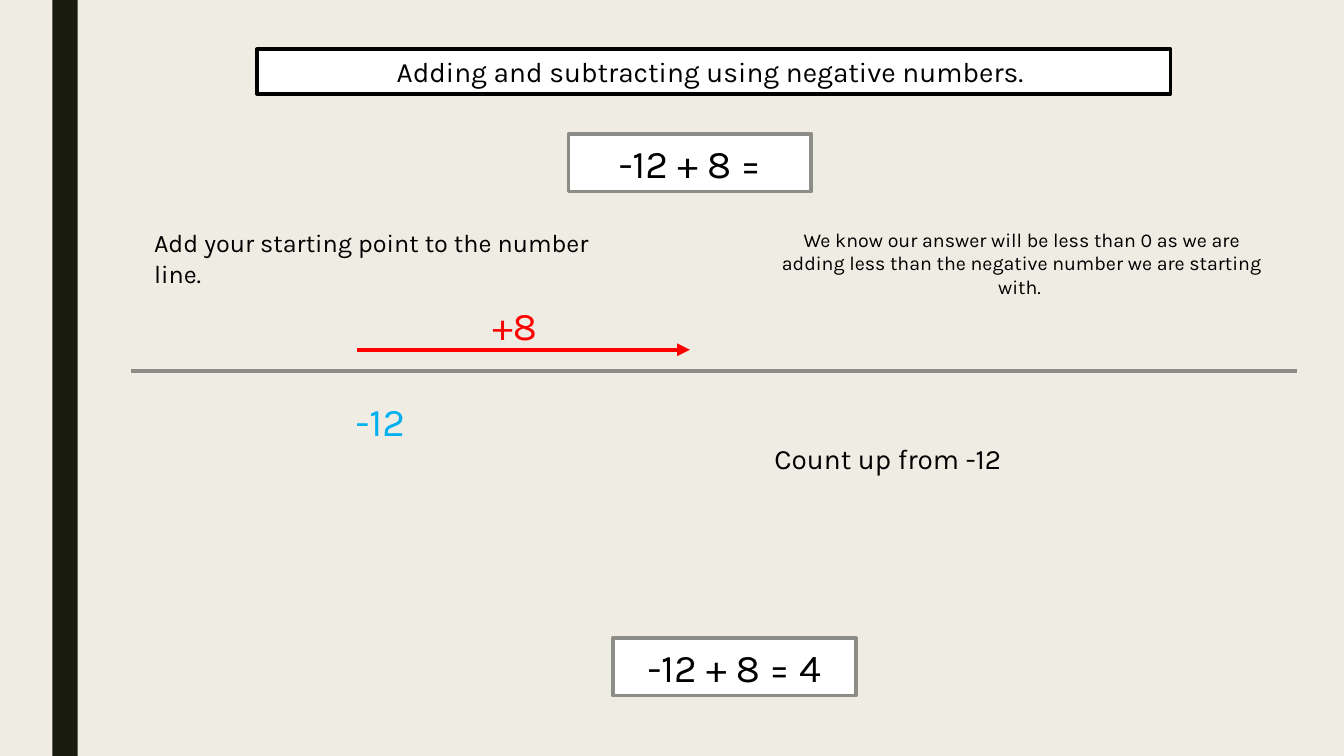
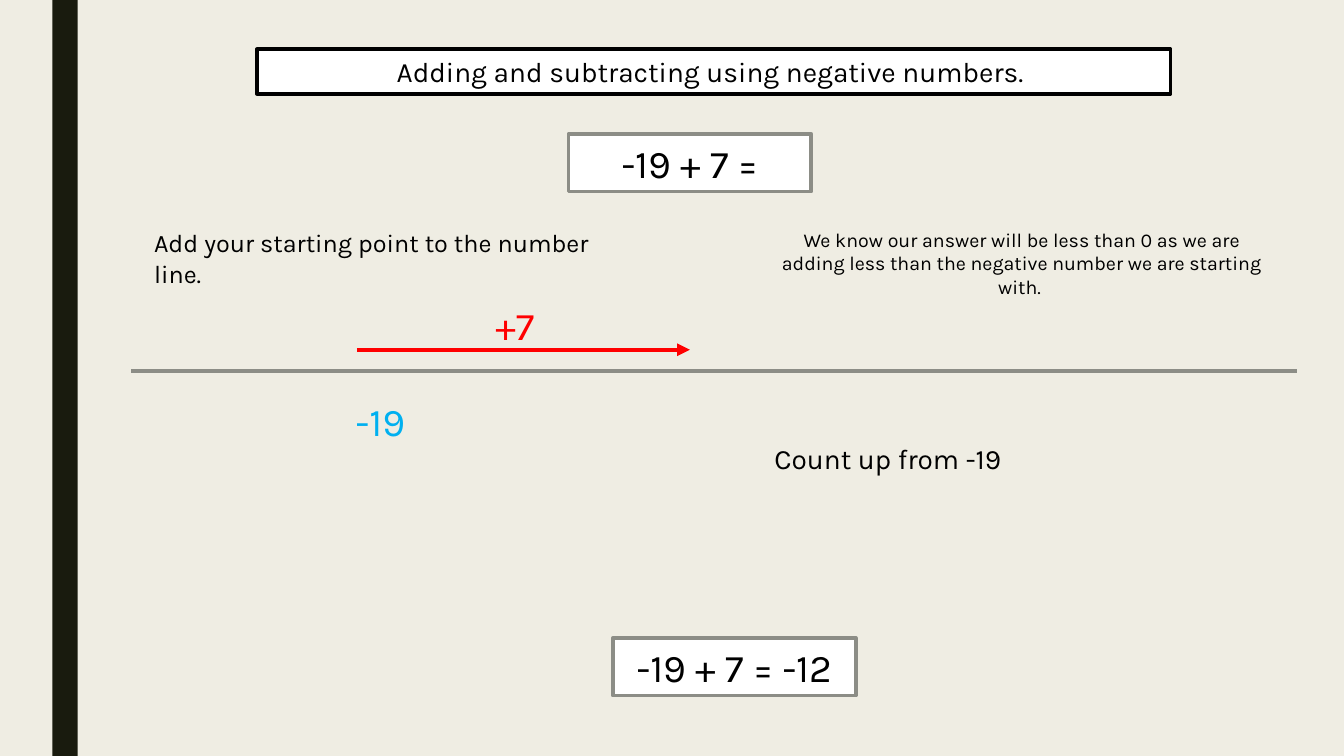
from dataclasses import dataclass

from lxml.etree import SubElement
from pptx import Presentation
from pptx.dml.color import RGBColor
from pptx.enum.shapes import MSO_CONNECTOR as Connector, MSO_SHAPE as Preset
from pptx.enum.text import MSO_ANCHOR as Anchor, MSO_AUTO_SIZE as AutoSize, PP_ALIGN as Align
from pptx.oxml.ns import qn
from pptx.util import Inches, Pt


@dataclass(frozen=True)
class Theme:
    font: str = "Karla"
    paper: str = "EFEDE3"
    band: str = "191B0E"
    ink: str = "000000"
    box: str = "FFFFFF"
    grey: str = "8C8D86"
    start: str = "00B0F0"
    step: str = "FF0000"
    sum_size: float = 28
    title_size: float = 20
    prompt_size: float = 18
    note_size: float = 14
    border: float = 2.75
    stroke: float = 3


COLUMNS, ROWS = 40, 30
SUM_COLUMNS, LABEL_COLUMNS, SUM_ROWS, TITLE_ROWS = 7.23, 2.64, 2.28, 1.76
TITLE = "Adding and subtracting using negative numbers. "
PROMPT = "Add your starting point to the number line."
NOTE = ("We know our answer will be less than 0 as we are adding less than "
        "the negative number we are starting with. ")
EXERCISES = [("-12", "8", "4"), ("-19", "7", "-12")]


def apply_format(target, values):
    for name, value in values.items():
        setattr(target, name, value)


class Deck:
    def __init__(self, theme):
        self.theme = theme
        self.presentation = Presentation()
        apply_format(self.presentation, {"slide_width": Inches(13.33), "slide_height": Inches(7.5)})
        self.column = self.presentation.slide_width / COLUMNS
        self.row = self.presentation.slide_height / ROWS
        self.layout = self.presentation.slide_layouts.get_by_name("Title Only")
        self.slide = None
        self.paint(self.presentation.slide_master.background.fill, theme.paper)

    def add_slide(self):
        self.slide = self.presentation.slides.add_slide(self.layout)

    def place(self, column, row, columns, rows):
        return (round(column * self.column), round(row * self.row),
                round(columns * self.column), round(rows * self.row))

    def paint(self, fill, color):
        fill.solid()
        fill.fore_color.rgb = RGBColor.from_string(color)

    def outline(self, line, color, width):
        self.paint(line.fill, color)
        line.width = Pt(width)

    def set_text(self, shape, text, size, color=None, align=Align.CENTER):
        frame = shape.text_frame
        frame.text = text
        apply_format(frame, {"word_wrap": True, "auto_size": AutoSize.NONE,
                             "vertical_anchor": Anchor.TOP})
        paragraph = frame.paragraphs[0]
        paragraph.alignment = align
        font = paragraph.runs[0].font
        apply_format(font, {"name": self.theme.font, "size": Pt(size)})
        font.color.rgb = RGBColor.from_string(color or self.theme.ink)

    def rectangle(self, area, color):
        shape = self.slide.shapes.add_shape(Preset.RECTANGLE, *self.place(*area))
        shape.shadow.inherit = False
        self.paint(shape.fill, color)
        return shape

    def layout_band(self, area):
        band = self.rectangle(area, self.theme.band)
        band.line.fill.background()
        band.element.nvSpPr.cNvPr.set("id", "20")
        self.layout.shapes.element.append(band.element)

    def title(self, text, area):
        title = self.slide.shapes.title
        apply_format(title, dict(zip(("left", "top", "width", "height"), self.place(*area))))
        self.paint(title.fill, self.theme.box)
        self.outline(title.line, self.theme.ink, self.theme.border)
        self.set_text(title, text, self.theme.title_size)

    def sum_box(self, text, column, row):
        shape = self.rectangle((column, row, SUM_COLUMNS, SUM_ROWS), self.theme.box)
        self.outline(shape.line, self.theme.grey, self.theme.border)
        self.set_text(shape, text, self.theme.sum_size)

    def text(self, text, area, size, color=None, align=Align.CENTER):
        shape = self.slide.shapes.add_textbox(*self.place(*area))
        self.set_text(shape, text, size, color, align)

    def label(self, text, column, row, color):
        self.text(text, (column, row, LABEL_COLUMNS, SUM_ROWS), self.theme.sum_size, color)

    def horizontal_line(self, start, end, row, color, arrow=False):
        left, top, width, height = self.place(start, row, end - start, 0)
        connector = self.slide.shapes.add_connector(
            Connector.STRAIGHT, left, top, left + width, top + height)
        self.outline(connector.line, color, self.theme.stroke)
        properties = connector.element.spPr
        if arrow:
            SubElement(properties.find(qn("a:ln")), qn("a:tailEnd"), type="triangle")
        SubElement(properties, qn("a:effectLst"))


def add_exercise(deck, start, step, answer):
    theme = deck.theme
    question = f"{start} + {step} ="
    deck.title(TITLE, (7.65, 1.96, 27.19, TITLE_ROWS))
    deck.sum_box(question, 16.92, 5.32)
    deck.horizontal_line(3.9, 38.59, 14.72, theme.grey)
    deck.text(PROMPT, (4.29, 8.84, 14.04, 1.6), theme.prompt_size, align=Align.LEFT)
    deck.label(start, 10, 15.56, theme.start)
    deck.text(NOTE, (22.78, 8.84, 15.27, SUM_ROWS), theme.note_size)
    deck.horizontal_line(10.62, 20.53, 13.88, theme.step, arrow=True)
    deck.label(f"+{step}", 14, 11.76, theme.step)
    deck.text(f"Count up from {start}", (21.85, 17.32, 9.15, TITLE_ROWS), theme.title_size)
    deck.sum_box(f"{question} {answer}", 18.24, 25.32)


def main():
    deck = Deck(Theme())
    for index, exercise in enumerate(EXERCISES):
        deck.add_slide()
        if index == 0:
            deck.layout_band((1.56, 0, 0.75, ROWS))
        add_exercise(deck, *exercise)
    deck.presentation.save("out.pptx")


if __name__ == "__main__":
    main()
